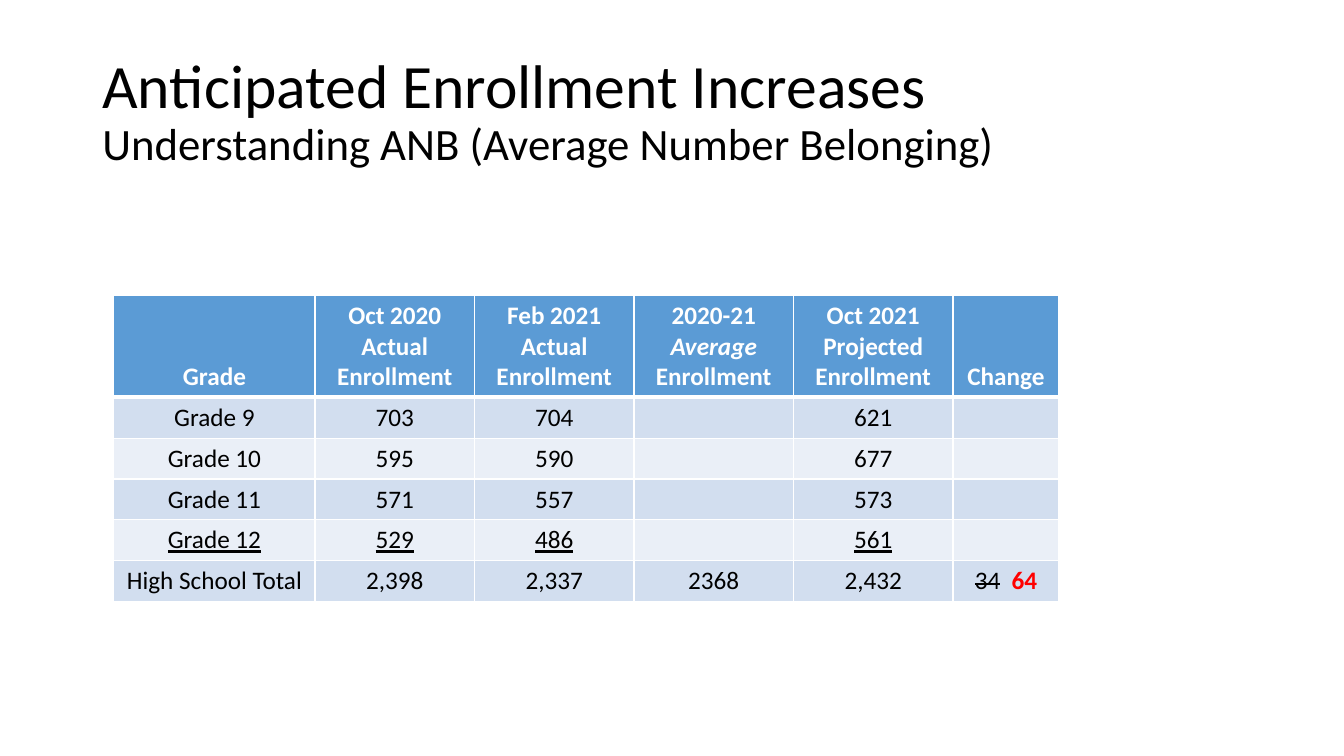
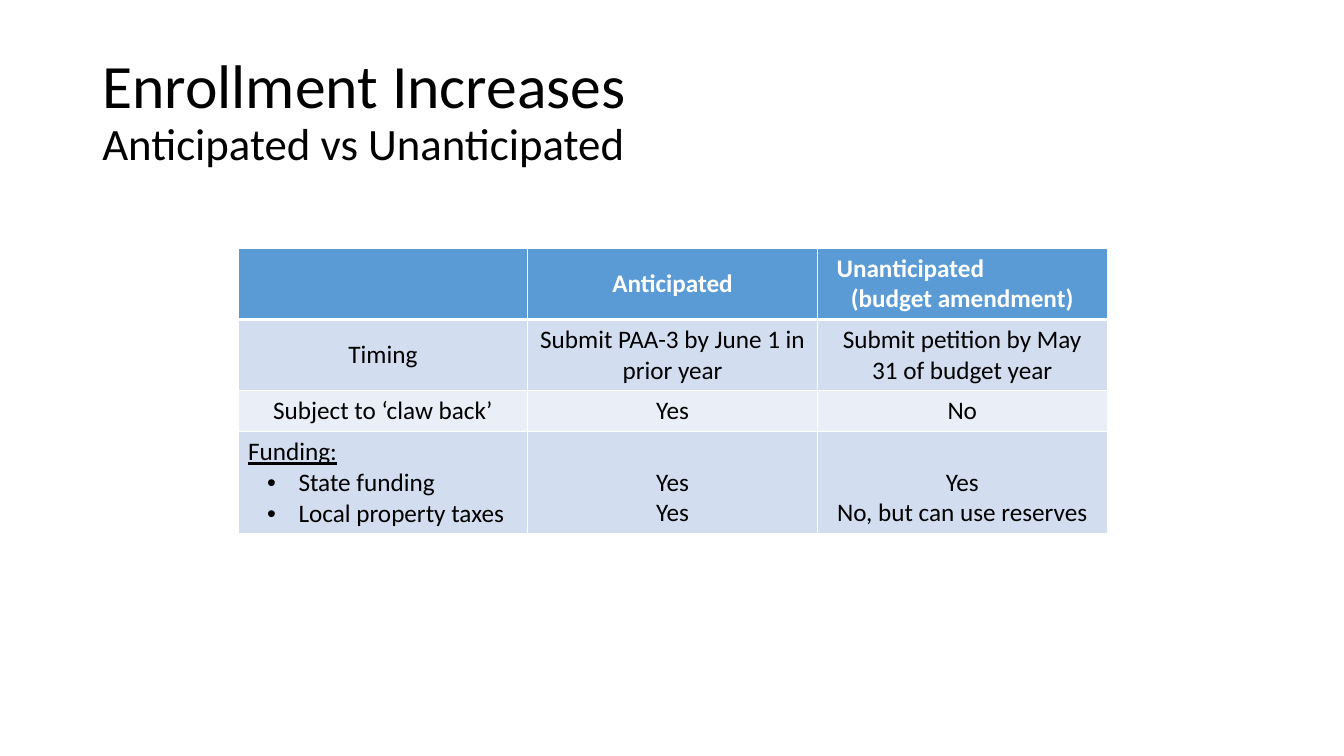
from lxml.etree import SubElement as Sub
from pptx import Presentation
from pptx.dml.color import RGBColor as RGB
from pptx.enum.text import MSO_ANCHOR as Anchor, PP_ALIGN as Align
from pptx.oxml.ns import qn
from pptx.util import Cm, Pt

HUES = {"ink": "000000", "white": "FFFFFF", "head": "5B9BD5",
        "odd": "D2DEEF", "even": "EAEFF7", "red": "FF0000"}
FACE = "Calibri"
TOP, MID, LOW = Anchor.TOP, Anchor.MIDDLE, Anchor.BOTTOM


def put(frame, lines, **base):
    for i, line in enumerate(lines):
        para = frame.paragraphs[0] if i == 0 else frame.add_paragraph()
        runs = [(line, {})] if isinstance(line, str) else line
        look = {**base, **runs[0][1]}
        para.alignment = look.get("align", Align.LEFT)
        para.line_spacing = look.get("space", 1.0)
        props = para._p.get_or_add_pPr()
        props.set("marL", str(Cm(look.get("left", 0))))
        if "hang" in look:
            props.set("indent", str(-Cm(look["hang"])))
            Sub(props, qn("a:buFont")).set("typeface", "Arial")
            Sub(props, qn("a:buChar")).set("char", "•")
        for text, own in runs:
            look = {**base, **own}
            run = para.add_run()
            run.text = text
            font = run.font
            font.name = FACE
            font.size = Pt(look.get("size", 18))
            font.bold = look.get("bold", False)
            font.italic = look.get("italic", False)
            font.underline = look.get("under", False)
            font.color.rgb = RGB.from_string(HUES[look.get("hue", "ink")])
            if look.get("strike"):
                font._element.set("strike", "sngStrike")
            if "track" in look:
                font._element.set("spc", str(look["track"] * 100))


def edge(cell, row):
    props = cell._tc.get_or_add_tcPr()
    thick = {"lnT": row == 1, "lnB": row == 0}
    for side in ("lnL", "lnR", "lnT", "lnB"):
        line = Sub(props, qn(f"a:{side}"), w=str(Pt(3 if thick.get(side) else 1)))
        fill = Sub(line, qn("a:solidFill"))
        Sub(fill, qn("a:srgbClr"), val=HUES["white"])


ital = {"italic": True}
under = {"under": True}
point = {"left": 1.27, "hang": 0.79, "align": Align.LEFT}

grades = [
    [["Grade"], ["Oct 2020", "Actual Enrollment"], ["Feb 2021", "Actual Enrollment"],
     [[("2020-21 ", {}), ("Average", ital), (" Enrollment", {})]],
     ["Oct 2021", "Projected Enrollment"], ["Change"]],
    [["Grade 9"], ["703"], ["704"], [], ["621"], []],
    [["Grade 10"], ["595"], ["590"], [], ["677"], []],
    [["Grade 11"], ["571"], ["557"], [], ["573"], []],
    [[[(text, under)]] if text else [] for text in ("Grade 12", "529", "486", "", "561", "")],
    [["High School Total"], ["2,398"], ["2,337"], ["2368"], ["2,432"],
     [[("34", {"strike": True}), (" ", {"track": 4}), ("64", {"hue": "red", "bold": True})]]],
]
terms = [
    [[], ["Anticipated"],
     [[("Unanticipated", {"align": Align.LEFT, "left": 0.23})], "(budget amendment)"]],
    [["Timing"], ["Submit PAA-3 by June 1 in prior year"],
     ["Submit petition by May 31 of budget year"]],
    [["Subject to ‘claw back’"], ["Yes"], ["No"]],
    [[[("Funding:", {"under": True, "align": Align.LEFT})],
      [("State funding", point)], [("Local property taxes", point)]],
     ["Yes", "Yes"], ["Yes", "No, but can use reserves"]],
]

pages = [
    {"title": "Anticipated Enrollment Increases",
     "sub": "Understanding ANB (Average Number Belonging)",
     "cells": grades, "at": (2.87, 7.44),
     "cols": [5.07] + [4.02] * 4 + [2.67],
     "rows": [2.57] + [1.03] * 5, "fix": [LOW] + [TOP] * 5},
    {"title": "Enrollment Increases", "sub": "Anticipated vs Unanticipated",
     "cells": terms, "at": (6, 6.25), "cols": [7.3] * 3,
     "rows": [1.8, 1.8, 1.03, 2.57], "fix": [MID, MID, MID, LOW]},
]

deck = Presentation()
deck.slide_width, deck.slide_height = Cm(33.87), Cm(19.05)

for page in pages:
    slide = deck.slides.add_slide(deck.slide_layouts[6])
    frame = slide.shapes.add_textbox(Cm(2.33), Cm(1.01), Cm(29.21), Cm(3.68)).text_frame
    frame.word_wrap = True
    frame.vertical_anchor = MID
    put(frame, [[(page["title"], {"size": 44})], page["sub"]], size=32, space=0.9)

    cols, rows = page["cols"], page["rows"]
    left, top = page["at"]
    table = slide.shapes.add_table(len(rows), len(cols), Cm(left), Cm(top),
                                   Cm(sum(cols)), Cm(sum(rows))).table
    for c, wide in enumerate(cols):
        table.columns[c].width = Cm(wide)
    for r, high in enumerate(rows):
        table.rows[r].height = Cm(high)
        tint = "head" if r == 0 else "odd" if r % 2 else "even"
        for c, lines in enumerate(page["cells"][r]):
            cell = table.cell(r, c)
            edge(cell, r)
            cell.fill.solid()
            cell.fill.fore_color.rgb = RGB.from_string(HUES[tint])
            cell.vertical_anchor = page["fix"][r]
            put(cell.text_frame, lines, align=Align.CENTER, bold=r == 0,
                hue="ink" if r else "white")

deck.save("out.pptx")
